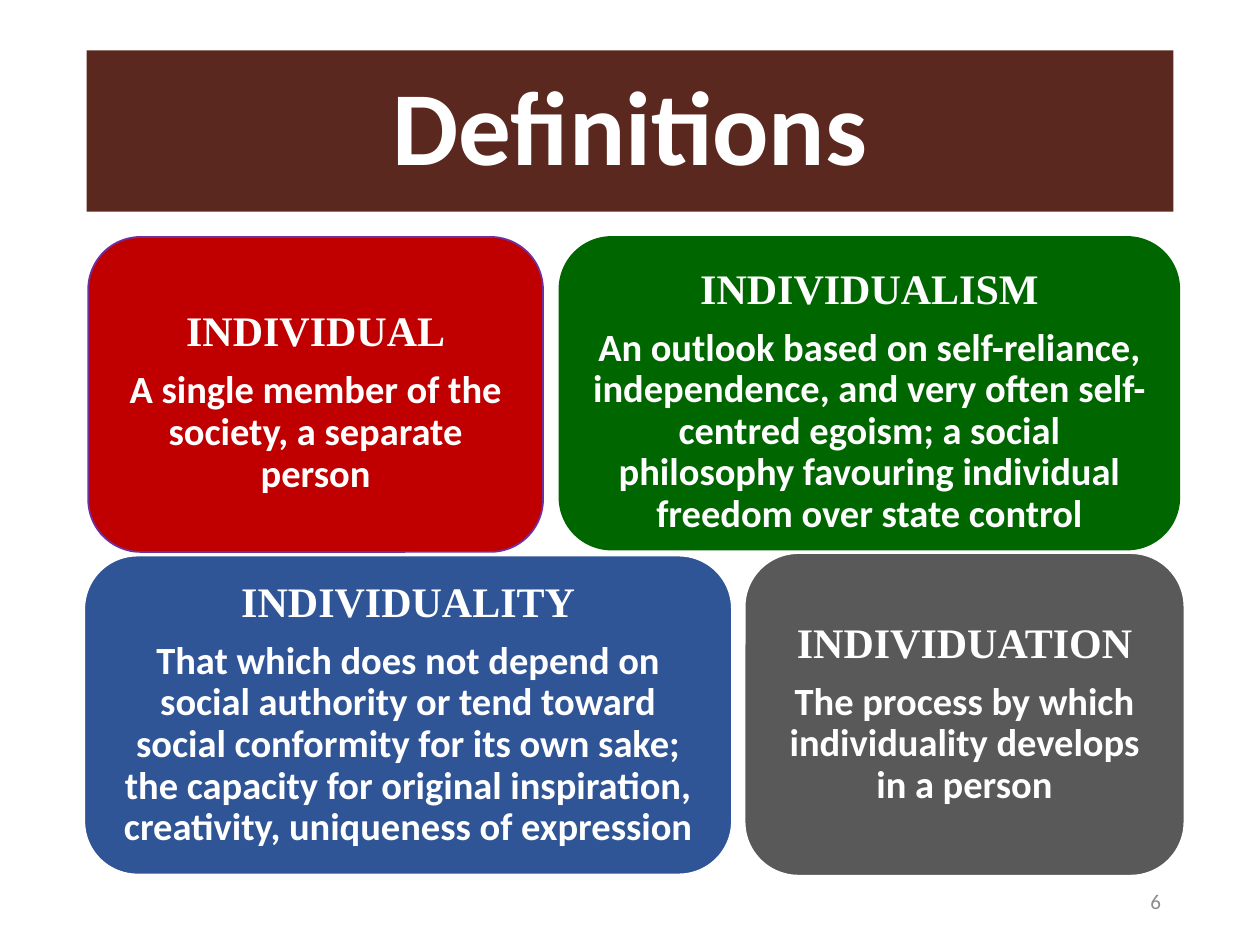
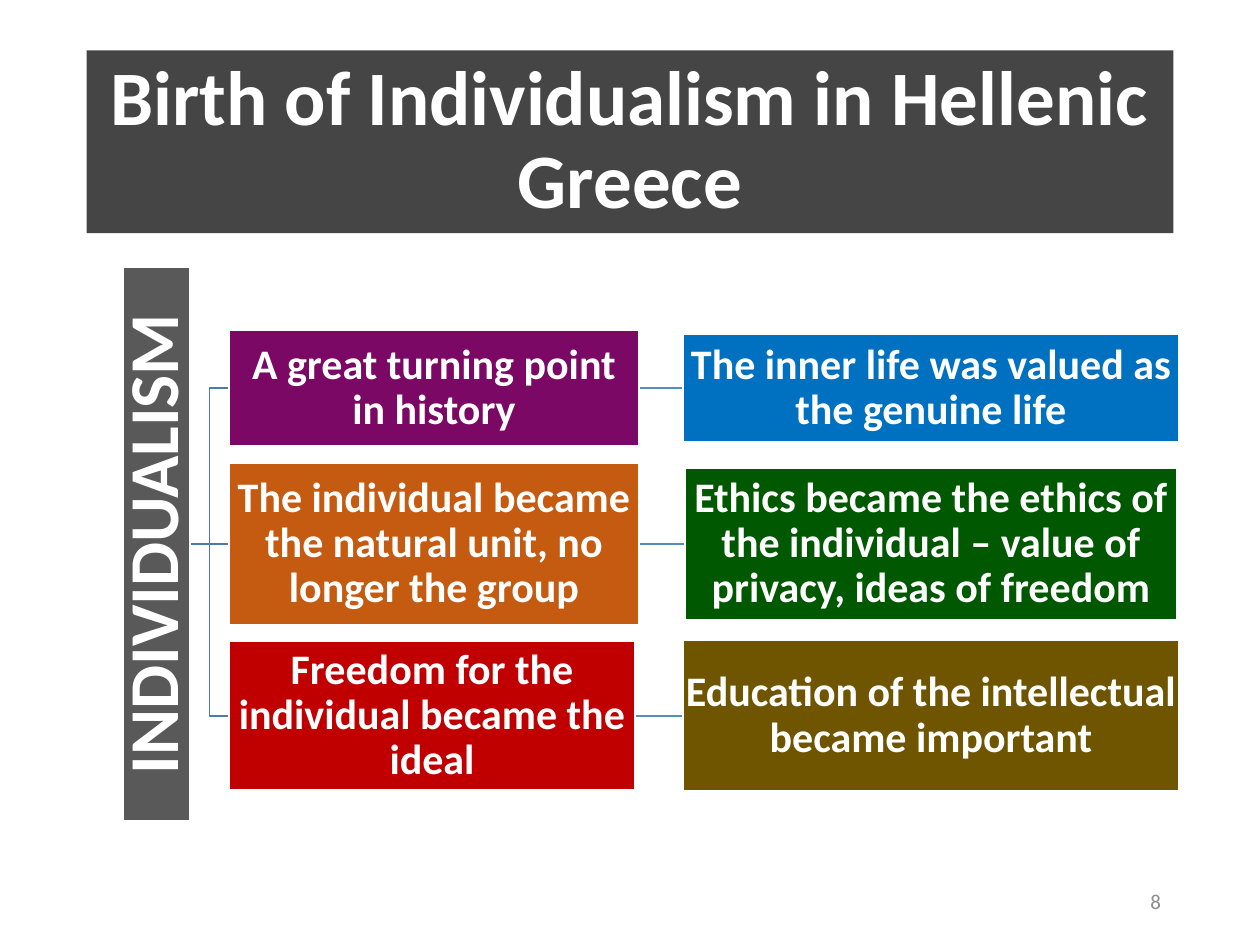
from lxml import etree
from pptx import Presentation
from pptx.dml.color import RGBColor
from pptx.enum import shapes, text
from pptx.oxml import ns
from pptx.util import Pt

WHITE = RGBColor(0xFF, 0xFF, 0xFF)
GREY = RGBColor(0x59, 0x59, 0x59)
CHARCOAL = RGBColor(0x45, 0x45, 0x45)
NUMBER_GREY = RGBColor(0x8C, 0x8C, 0x8C)
BROWN = RGBColor(0x5B, 0x28, 0x1F)
RED = RGBColor(0xC0, 0x00, 0x00)
PURPLE = RGBColor(0x70, 0x30, 0xA0)
PLUM = RGBColor(0x7A, 0x08, 0x64)
GREEN = RGBColor(0x00, 0x66, 0x00)
DARK_GREEN = RGBColor(0x00, 0x58, 0x00)
NAVY = RGBColor(0x2F, 0x55, 0x97)
BLUE = RGBColor(0x00, 0x70, 0xC0)
ORANGE = RGBColor(0xC5, 0x5A, 0x11)
OLIVE = RGBColor(0x70, 0x55, 0x00)
BRANCH_BLUE = RGBColor(0x49, 0x7C, 0xAB)
LINK_BLUE = RGBColor(0x53, 0x8D, 0xC1)

SANS, SERIF = "Calibri", "Times New Roman"

# Term, meaning, (left, top, width, height), fill, outline, extra space above
DEFINITIONS = [
    ("INDIVIDUAL", "A single member of the society, a separate person",
     (50.4, 135.4, 259.9, 180), RED, PURPLE, 9.8),
    ("INDIVIDUALISM",
     "An outlook based on self-reliance, independence, and very often "
     "self-centred egoism; a social philosophy favouring individual freedom "
     "over state control",
     (319.7, 135.4, 354.2, 178.6), GREEN, GREEN, 9.8),
    ("INDIVIDUALITY",
     "That which does not depend on social authority or tend toward social "
     "conformity for its own sake; the capacity for original inspiration, "
     "creativity, uniqueness of expression",
     (48.2, 317.5, 370.1, 182.2), NAVY, WHITE, 0),
    ("INDIVIDUATION", "The process by which individuality develops in a person",
     (425.5, 316.1, 251.3, 184.3), GREY, WHITE, 0),
]

# Middle of the row, then cause and effect as (wording, width, height, fill)
BIRTH_ROWS = [
    (221.8, ("A great turning point in history", 234, 66.2, PLUM),
     ("The inner life was valued as the genuine life", 283.7, 61.9, BLUE)),
    (310.8, ("The individual became the natural unit, no longer the group",
             234, 92.2, ORANGE),
     ("Ethics became the ethics of the individual – value of privacy, "
      "ideas of freedom", 280.8, 86.4, DARK_GREEN)),
    (409, ("Freedom for the individual became the ideal", 231.8, 85, RED),
     ("Education of the intellectual became important", 283.7, 86.4, OLIVE)),
]
SPINE_CENTER, SPINE_LENGTH, SPINE_THICKNESS = (89.3, 310.8), 316.8, 38.2
CAUSE_LEFT, EFFECT_CENTER = 131, 532


def write(box, lines, color=WHITE, bold=True, align=text.PP_ALIGN.CENTER,
          spacing=0.9, insets=(7.2, 3.6, 7.2, 3.6)):
    """Fill a box with paragraphs given as (wording, size, font)."""
    frame = box.text_frame
    frame.word_wrap = True
    frame.vertical_anchor = text.MSO_ANCHOR.MIDDLE
    (frame.margin_left, frame.margin_top,
     frame.margin_right, frame.margin_bottom) = map(Pt, insets)
    for index, (wording, size, font) in enumerate(lines):
        para = frame.add_paragraph() if index else frame.paragraphs[0]
        para.text = wording
        para.alignment = align
        para.line_spacing = spacing
        if index < len(lines) - 1:
            para.space_after = Pt(0.35 * size)
        para.font.size = Pt(size)
        para.font.name = font
        para.font.bold = bold
        para.font.color.rgb = color


def add_box(page, area, fill, outline=None, kind=shapes.MSO_SHAPE.RECTANGLE):
    box = page.shapes.add_shape(kind, *map(Pt, area))
    box.shadow.inherit = False
    box.fill.solid()
    box.fill.fore_color.rgb = fill
    if outline is None:
        box.line.fill.background()
    else:
        box.line.color.rgb = outline
        box.line.width = Pt(1)
    return box


def add_line(page, start, end, color):
    level = start[1] == end[1]
    kind = shapes.MSO_CONNECTOR.STRAIGHT if level else shapes.MSO_CONNECTOR.ELBOW
    line = page.shapes.add_connector(kind, *map(Pt, start + end))
    line.line.color.rgb = color
    line.line.width = Pt(1)
    etree.SubElement(line._element.spPr, ns.qn("a:effectLst"))


def add_page(deck, title, size, band_height, band_color, number):
    page = deck.slides.add_slide(deck.slide_layouts[6])
    band = add_box(page, (49.5, 28.8, 621, band_height), band_color)
    write(band, [(title, size, SANS)])
    footer = page.shapes.add_textbox(Pt(508.5), Pt(500.5), Pt(162), Pt(28.8))
    write(footer, [(number, 12, SANS)], color=NUMBER_GREY, bold=False,
          align=text.PP_ALIGN.RIGHT, spacing=1.0)
    return page


def build_definitions(deck):
    page = add_page(deck, "Definitions", 60, 92.2, BROWN, "6")
    for term, meaning, area, fill, outline, above in DEFINITIONS:
        card = add_box(page, area, fill, outline,
                       shapes.MSO_SHAPE.ROUNDED_RECTANGLE)
        write(card, [(term, 24, SERIF), (meaning, 22, SANS)],
              insets=(8, above, 8, 0))


def build_birth(deck):
    page = add_page(deck, "Birth of Individualism in Hellenic Greece",
                    44, 104.4, CHARCOAL, "8")
    center_x, center_y = SPINE_CENTER
    spine_edge = center_x + SPINE_THICKNESS / 2

    # Lines lie behind the boxes
    for middle, cause, effect in BIRTH_ROWS:
        add_line(page, (spine_edge, center_y), (CAUSE_LEFT, middle), BRANCH_BLUE)
        add_line(page, (CAUSE_LEFT + cause[1], middle),
                 (EFFECT_CENTER - effect[1] / 2, middle), LINK_BLUE)

    # Spine, turned to read upwards
    spine = add_box(page, (center_x - SPINE_LENGTH / 2,
                           center_y - SPINE_THICKNESS / 2,
                           SPINE_LENGTH, SPINE_THICKNESS), GREY, WHITE)
    spine.rotation = 270
    write(spine, [("INDIVIDUALISM", 40, SANS)], insets=(2, 2, 2, 2))

    # Causes and effects
    for middle, cause, effect in BIRTH_ROWS:
        effect_left = EFFECT_CENTER - effect[1] / 2
        for left, (wording, width, height, fill) in ((CAUSE_LEFT, cause),
                                                     (effect_left, effect)):
            box = add_box(page, (left, middle - height / 2, width, height),
                          fill, WHITE)
            write(box, [(wording, 24, SANS)], insets=(1.2, 1.2, 1.2, 1.2))


def main():
    deck = Presentation()
    deck.slide_width, deck.slide_height = Pt(720), Pt(540)
    build_definitions(deck)
    build_birth(deck)
    deck.save("out.pptx")


if __name__ == "__main__":
    main()
